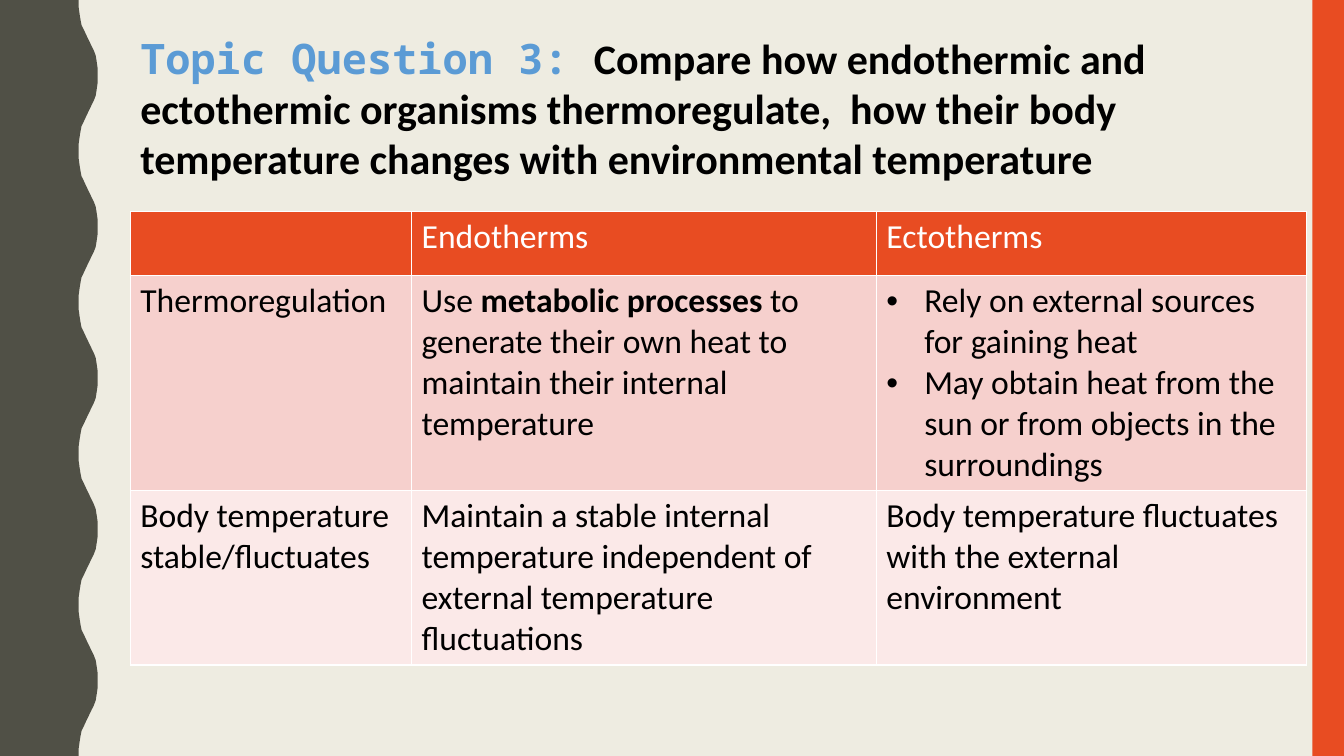
from dataclasses import dataclass
from typing import Any

from lxml import etree
from pptx import Presentation
from pptx import util as u
from pptx.dml.color import RGBColor
from pptx.enum import shapes, text
from pptx.oxml import ns

CREAM = RGBColor(0xEE, 0xEC, 0xE1)
OLIVE = RGBColor(0x50, 0x50, 0x46)
ORANGE = RGBColor(0xE8, 0x4C, 0x22)
ROSE = RGBColor(0xF6, 0xD0, 0xCD)
BLUSH = RGBColor(0xFB, 0xE9, 0xE8)
SKY = RGBColor(0x5B, 0x9B, 0xD5)
WHITE = RGBColor(0xFF, 0xFF, 0xFF)
BLACK = RGBColor(0, 0, 0)

PAGE_HEIGHT = 540
HALF_WAVE = 54
INDENT = 27
WAVE_RISE = [
    (56.2, 0), (56.2, 5), (56.9, 10), (57.6, 14.4), (58.3, 18),
    (59.8, 21), (61.2, 24), (62.6, 27), (64.1, 30), (65.5, 33),
    (67, 36), (68.4, 39.6), (69.1, 44), (69.8, 49), (69.8, 54),
]
COLUMN_WIDTHS = [201, 332, 307]


@dataclass(frozen=True)
class Phrase:
    words: str
    bold: bool = False
    font: str = "Calibri"
    color: RGBColor = BLACK


@dataclass(frozen=True)
class Entry:
    paragraphs: list[list[Phrase]]
    bulleted: bool = False


@dataclass(frozen=True)
class Band:
    height: float
    fill: RGBColor
    entries: list[Entry]


def entry(words: str, color: RGBColor = BLACK) -> Entry:
    return Entry([[Phrase(words, color=color)]])


BANDS = [
    Band(46, ORANGE, [entry(""), entry("Endotherms", WHITE), entry("Ectotherms", WHITE)]),
    Band(141, ROSE, [
        entry("Thermoregulation"),
        Entry([[
            Phrase("Use "),
            Phrase("metabolic processes ", bold=True),
            Phrase("to generate their own heat to maintain their internal temperature"),
        ]]),
        Entry([
            [Phrase("Rely on external sources for gaining heat")],
            [Phrase("May obtain heat from the sun or from objects in the surroundings")],
        ], bulleted=True),
    ]),
    Band(121, BLUSH, [
        entry("Body temperature stable/fluctuates"),
        entry("Maintain a stable internal temperature independent of "
              "external temperature fluctuations"),
        entry("Body temperature fluctuates with the external environment"),
    ]),
]
QUESTION = [
    Phrase("Topic Question 3: ", True, "Noto Sans Mono", SKY),
    Phrase("Compare how endothermic and ectothermic organisms thermoregulate,  "
           "how their body temperature changes with environmental temperature", True),
]


def apply(target: Any, values: dict[str, Any]) -> None:
    for name, value in values.items():
        setattr(target, name, value)


def paint(shape: Any, color: RGBColor) -> None:
    shape.shadow.inherit = False
    shape.fill.solid()
    shape.fill.fore_color.rgb = color
    shape.line.fill.background()


def write(paragraph: Any, phrases: list[Phrase], size: float) -> None:
    for phrase in phrases:
        run = paragraph.add_run()
        run.text = phrase.words
        apply(run.font, {"name": phrase.font, "size": u.Pt(size), "bold": phrase.bold})
        run.font.color.rgb = phrase.color


def add_bullet(paragraph: Any) -> None:
    properties = paragraph._p.get_or_add_pPr()
    properties.set("marL", str(u.Pt(INDENT)))
    properties.set("indent", str(-u.Pt(INDENT)))
    etree.SubElement(properties, ns.qn("a:buFont")).set("typeface", "Arial")
    etree.SubElement(properties, ns.qn("a:buChar")).set("char", "•")


def add_borders(cell: Any) -> None:
    properties = cell._tc.get_or_add_tcPr()
    for position, side in enumerate(["lnL", "lnR", "lnT", "lnB"]):
        border = etree.Element(ns.qn(f"a:{side}"), w=str(u.Pt(1)))
        solid = etree.SubElement(border, ns.qn("a:solidFill"))
        etree.SubElement(solid, ns.qn("a:srgbClr")).set("val", str(WHITE))
        properties.insert(position, border)


def fill_cell(cell: Any, content: Entry, color: RGBColor) -> None:
    cell.fill.solid()
    cell.fill.fore_color.rgb = color
    add_borders(cell)
    for index, phrases in enumerate(content.paragraphs):
        frame = cell.text_frame
        paragraph = frame.add_paragraph() if index else frame.paragraphs[0]
        write(paragraph, phrases, 24)
        if content.bulleted:
            add_bullet(paragraph)


def draw_edges(slide: Any) -> None:
    wave_fall = [(x, 2 * HALF_WAVE - y) for x, y in reversed(WAVE_RISE[:-1])]
    crest = [
        (x, y + start)
        for start in range(0, PAGE_HEIGHT, 2 * HALF_WAVE)
        for x, y in WAVE_RISE + wave_fall
    ]
    outline = [(u.Pt(x), u.Pt(y)) for x, y in crest + [(0, PAGE_HEIGHT)]]
    builder = slide.shapes.build_freeform(u.Pt(0), u.Pt(0))
    builder.add_line_segments(outline, close=True)
    paint(builder.convert_to_shape(), OLIVE)
    stripe = slide.shapes.add_shape(
        shapes.MSO_SHAPE.RECTANGLE, u.Pt(937.5), u.Pt(0), u.Pt(22.5), u.Pt(PAGE_HEIGHT))
    paint(stripe, ORANGE)


def draw_question(slide: Any) -> None:
    question = slide.shapes.title
    apply(question, {"left": u.Pt(93), "top": u.Pt(50),
                     "width": u.Pt(840), "height": u.Pt(54)})
    frame = question.text_frame
    apply(frame, {"word_wrap": True, "auto_size": text.MSO_AUTO_SIZE.NONE,
                  "vertical_anchor": text.MSO_ANCHOR.MIDDLE})
    frame.paragraphs[0].alignment = text.PP_ALIGN.LEFT
    write(frame.paragraphs[0], QUESTION, 30)


def draw_comparison(slide: Any) -> None:
    comparison = slide.shapes.add_table(
        len(BANDS), len(COLUMN_WIDTHS), u.Pt(93), u.Pt(151),
        u.Pt(sum(COLUMN_WIDTHS)), u.Pt(sum(band.height for band in BANDS))).table
    for column, width in zip(comparison.columns, COLUMN_WIDTHS):
        column.width = u.Pt(width)
    for row, band in zip(comparison.rows, BANDS):
        row.height = u.Pt(band.height)
        for cell, content in zip(row.cells, band.entries):
            fill_cell(cell, content, band.fill)


def main() -> None:
    deck = Presentation()
    apply(deck, {"slide_width": u.Pt(960), "slide_height": u.Pt(PAGE_HEIGHT)})
    slide = deck.slides.add_slide(deck.slide_layouts.get_by_name("Title Only"))
    slide.background.fill.solid()
    slide.background.fill.fore_color.rgb = CREAM
    draw_edges(slide)
    draw_comparison(slide)
    draw_question(slide)
    deck.save("out.pptx")


if __name__ == "__main__":
    main()
